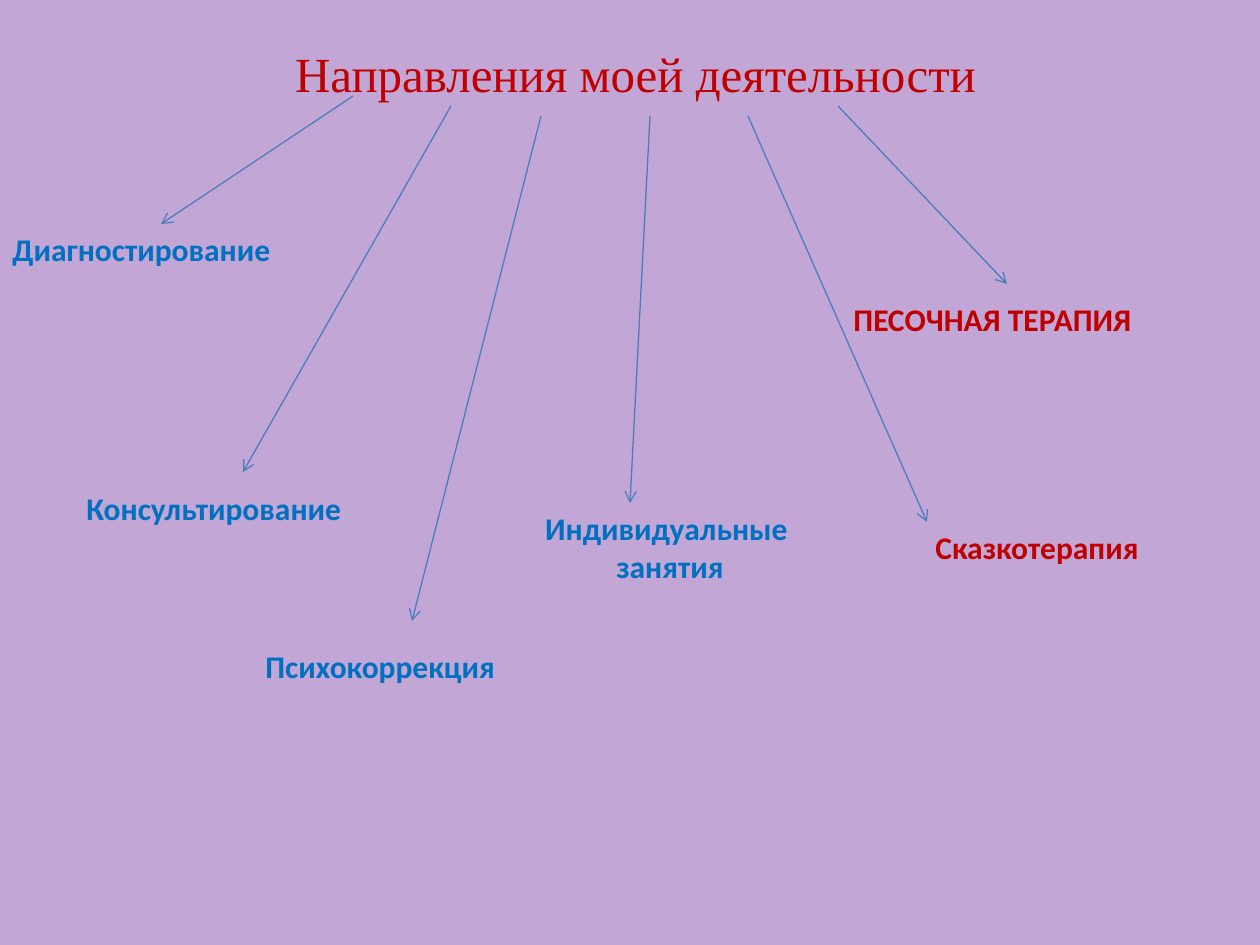
from dataclasses import dataclass

from lxml.etree import SubElement
from pptx import Presentation
from pptx.dml.color import RGBColor
from pptx.enum.shapes import MSO_CONNECTOR
from pptx.enum.text import MSO_AUTO_SIZE, PP_ALIGN
from pptx.oxml.ns import qn
from pptx.slide import Slide
from pptx.util import Emu, Pt

COLORS = {
    "background": "C1A6D6",
    "red": "C00000",
    "blue": "0070C0",
    "arrow": "4B7EBC",
}
PX_PER_INCH = 126


@dataclass(frozen=True)
class Label:
    text: str
    left: int
    top: int
    width: int
    height: int = 50
    color: str = "blue"
    align: PP_ALIGN = PP_ALIGN.LEFT
    font: str = "Calibri"
    size: int = 18
    bold: bool = True


@dataclass(frozen=True)
class Direction:
    """An arrow from the title and the label it leads to."""
    start: tuple[int, int]
    end: tuple[int, int]
    label: Label


TITLE = Label("Направления моей деятельности", 154, 37, 963, 72, "red",
              PP_ALIGN.CENTER, "Times New Roman", 28, False)

DIRECTIONS = [
    Direction((353, 96), (161, 224), Label("Диагностирование", 0, 224, 323)),
    Direction((451, 106), (243, 472), Label("Консультирование", 74, 483, 307)),
    Direction((650, 116), (630, 503),
              Label("Индивидуальные \nзанятия", 501, 503, 338, 89,
                    align=PP_ALIGN.CENTER)),
    Direction((838, 106), (1007, 284),
              Label("ПЕСОЧНАЯ ТЕРАПИЯ", 789, 294, 407, color="red",
                    align=PP_ALIGN.CENTER)),
    Direction((541, 116), (412, 621), Label("Психокоррекция", 253, 641, 307)),
    Direction((748, 116), (927, 522),
              Label("Сказкотерапия", 868, 522, 338, color="red",
                    align=PP_ALIGN.CENTER)),
]


def px(value: int) -> Emu:
    return Emu(round(value * 914400 / PX_PER_INCH))


def rgb(name: str) -> RGBColor:
    return RGBColor.from_string(COLORS[name])


def add_label(s: Slide, label: Label) -> None:
    box = s.shapes.add_textbox(px(label.left), px(label.top),
                               px(label.width), px(label.height))
    tf = box.text_frame
    tf.word_wrap = True
    tf.auto_size = MSO_AUTO_SIZE.SHAPE_TO_FIT_TEXT
    tf.text = label.text
    for p in tf.paragraphs:
        p.alignment = label.align
        for r in p.runs:
            r.font.name = label.font
            r.font.size = Pt(label.size)
            r.font.bold = label.bold
            r.font.color.rgb = rgb(label.color)


def add_arrow(s: Slide, start: tuple[int, int], end: tuple[int, int]) -> None:
    arrow = s.shapes.add_connector(MSO_CONNECTOR.STRAIGHT,
                                   *map(px, start), *map(px, end))
    arrow.line.color.rgb = rgb("arrow")
    arrow.line.width = Pt(0.75)
    SubElement(arrow.line._get_or_add_ln(), qn("a:tailEnd"), type="arrow")
    SubElement(arrow._element.spPr, qn("a:effectLst"))


def main() -> None:
    prs = Presentation()
    prs.slide_width, prs.slide_height = px(1260), px(945)
    s = prs.slides.add_slide(prs.slide_layouts[6])
    s.background.fill.solid()
    s.background.fill.fore_color.rgb = rgb("background")

    add_label(s, TITLE)
    for direction in DIRECTIONS:
        add_arrow(s, direction.start, direction.end)
        add_label(s, direction.label)

    prs.save("out.pptx")


if __name__ == "__main__":
    main()
